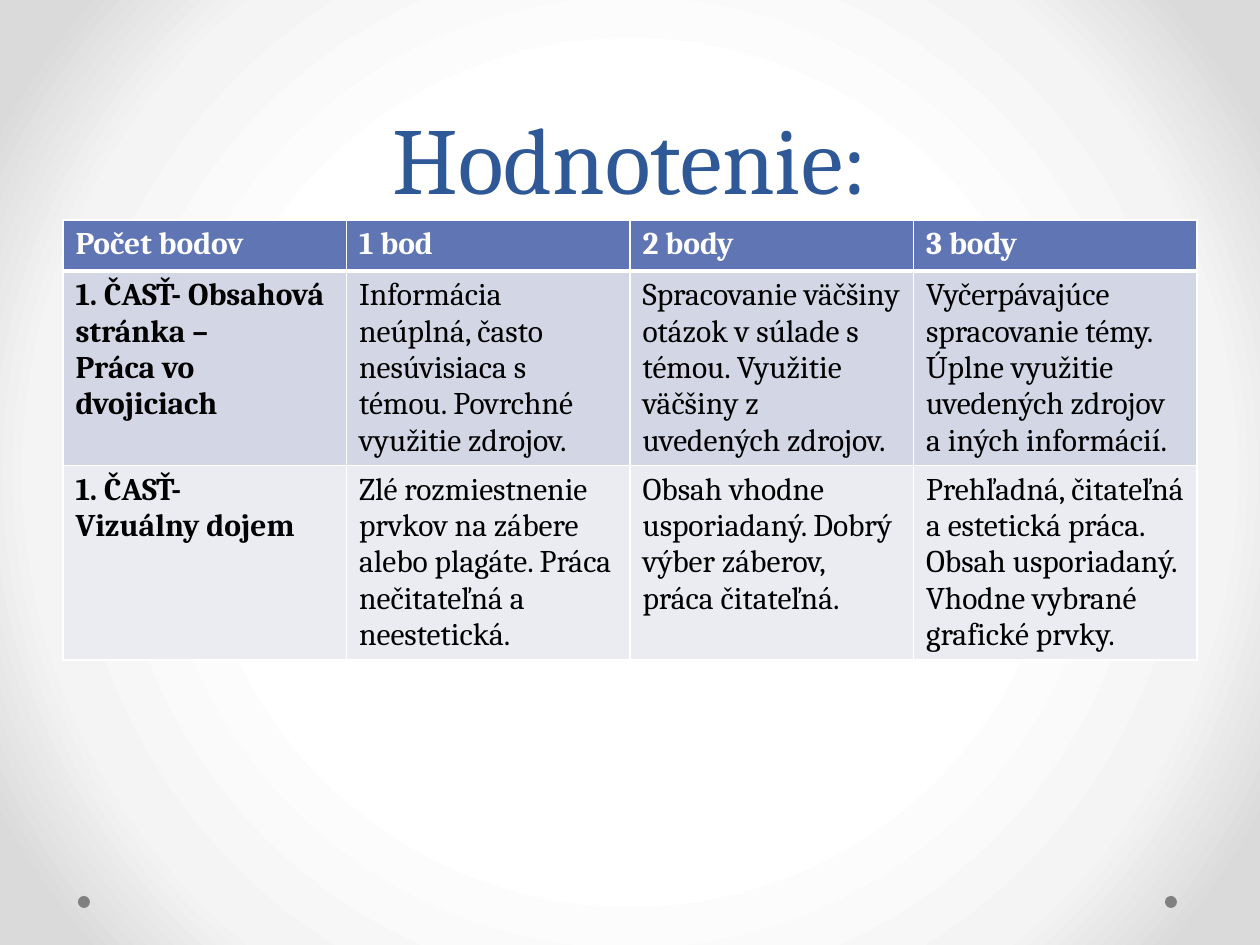
from lxml import etree
from pptx import Presentation, util as u
from pptx.dml.color import RGBColor
from pptx.enum import shapes, text
from pptx.oxml import ns, parse_xml

PX = 914400 / 126
FONT = "Cambria"
COLORS = {
    "title": "2F5897", "header": "6076B4", "content": "D2D6E5", "visual": "EAECF2",
    "white": "FFFFFF", "black": "000000", "dot": "808080",
    "haze": "F4F4F4", "edge": "DADADA",
}


def px(length):
    return u.Emu(round(length * PX))


def write(frame, wording, size=18, color="black", bold=False, align=text.PP_ALIGN.LEFT, spacing=None):
    frame.word_wrap = True
    frame.text = wording
    for paragraph in frame.paragraphs:
        paragraph.alignment = align
        paragraph.line_spacing = spacing
        font = paragraph.runs[0].font
        font.name, font.size, font.bold = FONT, u.Pt(size), bold
        font.color.rgb = RGBColor.from_string(COLORS[color])


deck = Presentation()
deck.slide_width, deck.slide_height = px(1260), px(945)
slide = deck.slides.add_slide(deck.slide_layouts[5])

backdrop = slide.background.fill
backdrop.gradient()
glow = slide.background._cSld.find(".//" + ns.qn("a:gradFill"))
for part in list(glow):
    glow.remove(part)
stops = etree.SubElement(glow, ns.qn("a:gsLst"))
for position, color in ((50, "white"), (76, "haze"), (92, "edge")):
    stop = etree.SubElement(stops, ns.qn("a:gs"), pos=str(position * 1000))
    etree.SubElement(stop, ns.qn("a:srgbClr"), val=COLORS[color])
circle = etree.SubElement(glow, ns.qn("a:path"), path="circle")
etree.SubElement(circle, ns.qn("a:fillToRect"), l="50000", t="50000", r="50000", b="50000")

for left in (1165, 78):
    dot = slide.shapes.add_shape(shapes.MSO_SHAPE.OVAL, px(left), px(896), px(12), px(12))
    dot.shadow.inherit = False
    dot.fill.solid()
    dot.fill.fore_color.rgb = RGBColor.from_string(COLORS["dot"])
    dot.line.fill.background()

heading = slide.shapes.title
heading.left, heading.top, heading.width, heading.height = px(63), px(0), px(1134), px(220)
heading.text_frame.vertical_anchor = text.MSO_ANCHOR.BOTTOM
write(heading.text_frame, "Hodnotenie:", size=54, color="title",
      align=text.PP_ALIGN.CENTER, spacing=u.Pt(58))

criteria = [
    ("header", 51, ["Počet bodov", "1 bod", "2 body", "3 body"]),
    ("content", 194, [
        "1. ČASŤ- Obsahová stránka –\nPráca vo dvojiciach",
        "Informácia neúplná, často nesúvisiaca s témou. Povrchné využitie zdrojov.",
        "Spracovanie väčšiny otázok v súlade s témou. Využitie väčšiny z uvedených zdrojov.",
        "Vyčerpávajúce spracovanie témy. Úplne využitie uvedených zdrojov a iných informácií.",
    ]),
    ("visual", 194, [
        "1. ČASŤ-\nVizuálny dojem",
        "Zlé rozmiestnenie prvkov na zábere alebo plagáte. Práca nečitateľná a neestetická.",
        "Obsah vhodne usporiadaný. Dobrý výber záberov, práca čitateľná.",
        "Prehľadná, čitateľná a estetická práca. Obsah usporiadaný. Vhodne vybrané grafické prvky.",
    ]),
]
total = sum(height for _, height, _ in criteria)
rubric = slide.shapes.add_table(len(criteria), 4, px(63), px(220), px(1134), px(total)).table

for row, (band, height, entries) in enumerate(criteria):
    rubric.rows[row].height = px(height)
    for column, entry in enumerate(entries):
        cell = rubric.cell(row, column)
        is_header = band == "header"
        write(cell.text_frame, entry, color="white" if is_header else "black",
              bold=is_header or column == 0)
        borders = cell._tc.get_or_add_tcPr()
        for side in "LRTB":
            thick = (row, side) in ((0, "B"), (1, "T"))
            borders.append(parse_xml(
                f'<a:ln{side} {ns.nsdecls("a")} w="{u.Pt(3 if thick else 1)}"><a:solidFill>'
                f'<a:srgbClr val="{COLORS["white"]}"/></a:solidFill></a:ln{side}>'))
        cell.fill.solid()
        cell.fill.fore_color.rgb = RGBColor.from_string(COLORS[band])

deck.save("out.pptx")
